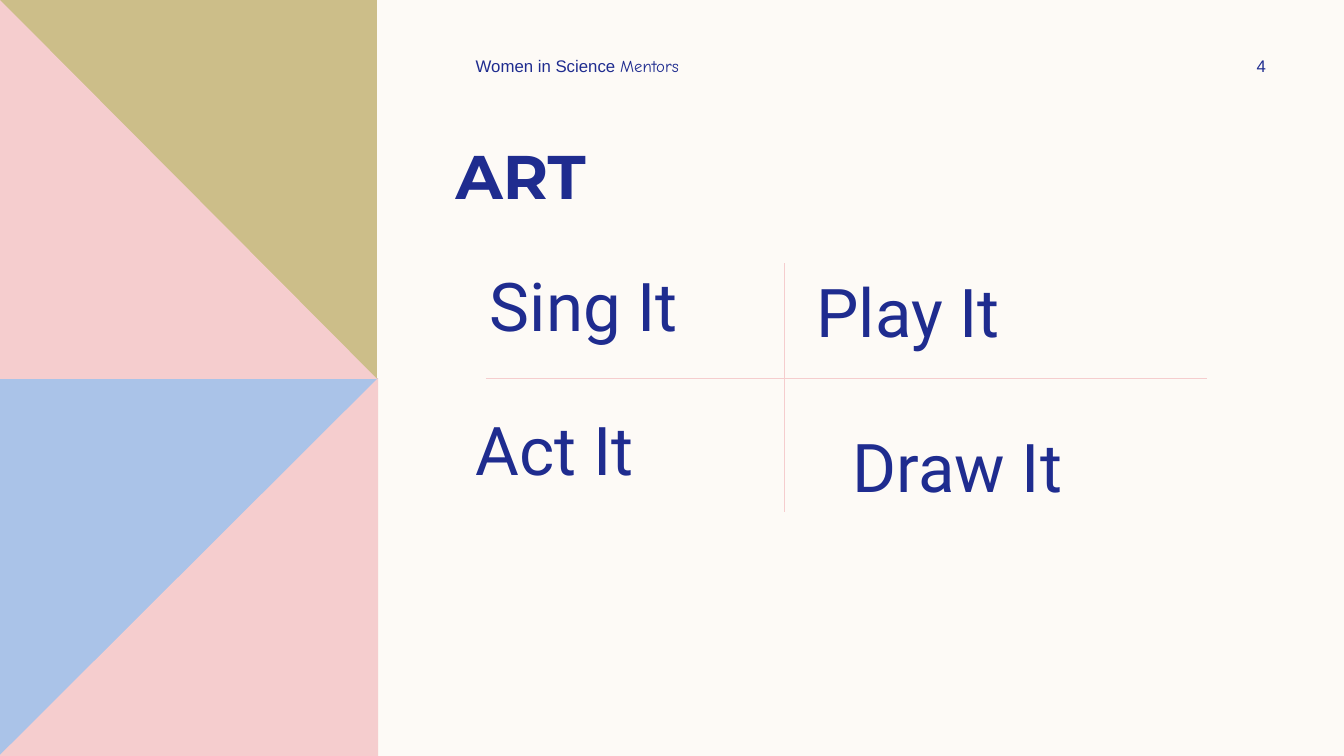
from dataclasses import dataclass

from lxml import etree
from pptx import Presentation
from pptx.dml.color import RGBColor
from pptx.enum.text import MSO_ANCHOR, MSO_AUTO_SIZE, PP_ALIGN
from pptx.oxml.ns import qn
from pptx.slide import Slide
from pptx.text.text import Font, TextFrame
from pptx.util import Inches, Pt

LEFT, CENTER = PP_ALIGN.LEFT, PP_ALIGN.CENTER
TOP, MIDDLE = MSO_ANCHOR.TOP, MSO_ANCHOR.MIDDLE
NO_AUTOFIT = MSO_AUTO_SIZE.NONE
TITLE_ONLY_LAYOUT = 5

Point = tuple[float, float]
Box = tuple[float, float, float, float]


@dataclass(frozen=True)
class Theme:
    cream: str = "FDFAF6"
    navy: str = "1F2C8F"
    pink: str = "F5CDCE"
    blue: str = "AAC3E8"
    olive: str = "CCBE89"
    title_font: str = "Montserrat"
    idea_font: str = "Roboto"
    header_font: str = "Arial"
    accent_font: str = "Comic Neue"
    title_size: float = 44
    idea_size: float = 48
    header_size: float = 12
    rule_width: float = 0.5


THEME = Theme()


@dataclass(frozen=True)
class Panel:
    corners: tuple[Point, ...]
    color: str


@dataclass(frozen=True)
class Label:
    text: str
    box: Box
    font: str
    size: float
    align: PP_ALIGN = LEFT
    anchor: MSO_ANCHOR = TOP
    left_inset: float = 0.1
    accent: str = ""
    bold: bool = False


@dataclass(frozen=True)
class Rule:
    start: Point
    end: Point


def idea(text: str, box: Box, left_inset: float = 0.1) -> Label:
    return Label(text, box, THEME.idea_font, THEME.idea_size, left_inset=left_inset)


def header(text: str, box: Box, align: PP_ALIGN = LEFT, accent: str = "") -> Label:
    return Label(text, box, THEME.header_font, THEME.header_size,
                 align, MIDDLE, accent=accent)


PANELS = (
    Panel(((0, 3.75), (3.75, 3.75), (3.75, 7.5), (0, 7.5)), THEME.blue),
    Panel(((3.75, 3.75), (3.75, 7.5), (0, 7.5), (0, 7.49)), THEME.pink),
    Panel(((0, 0), (3.74, 0), (3.74, 3.76), (0, 3.76)), THEME.olive),
    Panel(((0, 0), (3.74, 3.76), (0, 3.76)), THEME.pink),
)
TITLE = Label("ART", (4.42, 1.32, 7.4, 0.84), THEME.title_font,
              THEME.title_size, bold=True)
LABELS = (
    idea("Sing It", (4.27, 2.57, 2.57, 0.49), left_inset=0.59),
    header("Women in Science ", (4.62, 0.5, 3.5, 0.3), accent="Mentors"),
    header("4", (11.97, 0.5, 1.08, 0.3), CENTER),
    idea("Act It", (4.62, 4, 3.08, 0.91)),
    idea("Play It", (8, 2.63, 4.15, 0.91)),
    idea("Draw It", (8.36, 4.17, 3.43, 0.91)),
)
RULES = (
    Rule((4.82, 3.75), (11.97, 3.75)),
    Rule((7.78, 2.61), (7.78, 5.08)),
)


def rgb(color: str) -> RGBColor:
    return RGBColor.from_string(color)


def add_panel(slide: Slide, panel: Panel) -> None:
    first, *rest = [(Inches(x), Inches(y)) for x, y in panel.corners]
    builder = slide.shapes.build_freeform(*first)
    builder.add_line_segments(rest, close=True)
    triangle = builder.convert_to_shape()
    triangle.shadow.inherit = False
    triangle.fill.solid()
    triangle.fill.fore_color.rgb = rgb(panel.color)
    triangle.line.fill.background()


def style_font(font: Font, label: Label) -> None:
    font.name = label.font
    font.size = Pt(label.size)
    font.bold = label.bold
    font.color.rgb = rgb(THEME.navy)


def write_label(frame: TextFrame, label: Label) -> None:
    frame.word_wrap = True
    frame.auto_size = NO_AUTOFIT
    frame.vertical_anchor = label.anchor
    frame.margin_left = Inches(label.left_inset)
    paragraph = frame.paragraphs[0]
    paragraph.alignment = label.align
    style_font(paragraph.font, label)
    paragraph.add_run().text = label.text
    if label.accent:
        accent = paragraph.add_run()
        accent.text = label.accent
        accent.font.name = THEME.accent_font


def place_title(slide: Slide, label: Label) -> None:
    title = slide.shapes.title
    title.left, title.top, title.width, title.height = map(Inches, label.box)
    write_label(title.text_frame, label)


def add_label(slide: Slide, label: Label) -> None:
    textbox = slide.shapes.add_textbox(*map(Inches, label.box))
    write_label(textbox.text_frame, label)


def add_rule(slide: Slide, rule: Rule) -> None:
    ends = map(Inches, rule.start + rule.end)
    divider = slide.shapes.add_connector(1, *ends)
    divider.line.color.rgb = rgb(THEME.pink)
    divider.line.width = Pt(THEME.rule_width)
    etree.SubElement(divider._element.spPr, qn("a:effectLst"))


def main() -> None:
    deck = Presentation()
    deck.slide_width, deck.slide_height = Inches(13.33), Inches(7.5)
    slide = deck.slides.add_slide(deck.slide_layouts[TITLE_ONLY_LAYOUT])
    slide.background.fill.solid()
    slide.background.fill.fore_color.rgb = rgb(THEME.cream)

    for panel in PANELS:
        add_panel(slide, panel)
    place_title(slide, TITLE)
    for label in LABELS:
        add_label(slide, label)
    for rule in RULES:
        add_rule(slide, rule)
    deck.save("out.pptx")


if __name__ == "__main__":
    main()
